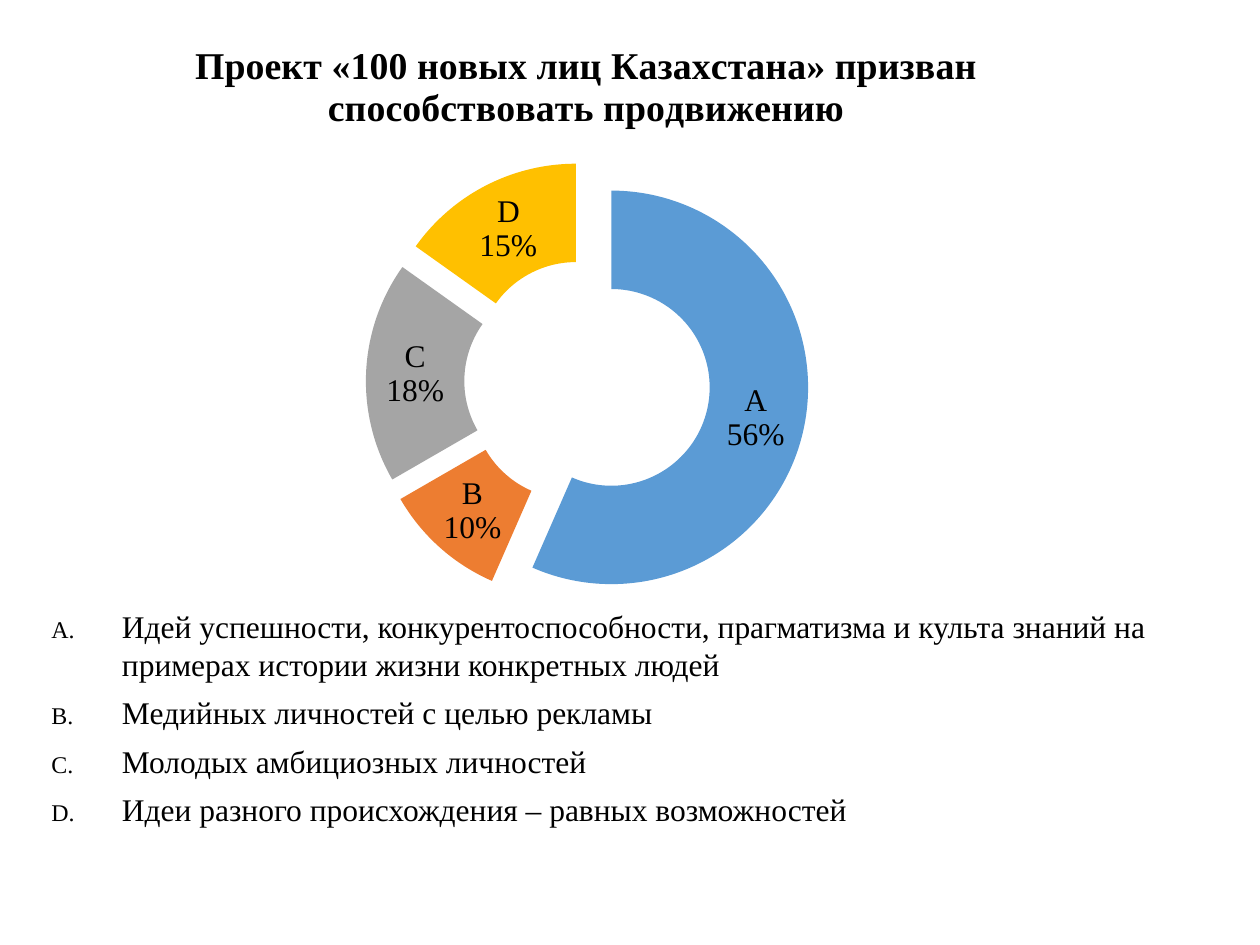
from lxml import etree
from pptx import Presentation
from pptx import util as u
from pptx.chart.data import CategoryChartData
from pptx.dml.color import RGBColor
from pptx.enum import chart as charts
from pptx.oxml.ns import qn

FONT = "Times New Roman"
BLACK = "000000"
QUESTION = "Проект «100 новых лиц Казахстана» призван способствовать продвижению"
SHARES = {"A": (56, "5B9BD5"), "B": (10, "ED7D31"), "C": (18, "A5A5A5"), "D": (15, "FFC000")}
ANSWERS = [
    "Идей успешности, конкурентоспособности, прагматизма и культа знаний на примерах истории жизни конкретных людей",
    "Медийных личностей с целью рекламы",
    "Молодых амбициозных личностей",
    "Идеи разного происхождения – равных возможностей",
]


def color(value):
    return RGBColor.from_string(value)


def style_font(font, size=18, bold=False, fill=BLACK, name=FONT):
    font.size, font.bold, font.name = u.Pt(size), bold, name
    font.color.rgb = color(fill)


def add_text(para, text, **style):
    span = para.add_run()
    span.text = text
    style_font(span.font, **style)


def add_letter_bullet(para, indent, percent):
    props = para._p.get_or_add_pPr()
    props.set("marL", str(indent))
    props.set("indent", str(-indent))
    etree.SubElement(props, qn("a:buSzPct"), val=str(percent * 1000))
    etree.SubElement(props, qn("a:buFont"), typeface=FONT)
    etree.SubElement(props, qn("a:buAutoNum"), type="alphaUcPeriod")


def add_answer_chart(page, left, top, width, height):
    data = CategoryChartData()
    data.categories = list(SHARES)
    data.add_series(QUESTION, [share for share, _ in SHARES.values()])
    chart = page.shapes.add_chart(
        charts.XL_CHART_TYPE.DOUGHNUT_EXPLODED, left, top, width, height, data).chart
    style_font(chart.font, name="Calibri")
    chart.has_legend = False
    chart.has_title = True
    add_text(chart.chart_title.text_frame.paragraphs[0], QUESTION, size=21.6, bold=True)
    chart.chart_title.include_in_layout = False

    plot = chart.plots[0]
    plot.vary_by_categories = True
    series = plot.series[0]
    for index, (_, fill) in enumerate(SHARES.values()):
        wedge = series.points[index].format.fill
        wedge.solid()
        wedge.fore_color.rgb = color(fill)
    for explosion in series._element.iter(qn("c:explosion")):
        explosion.set("val", "25")
    for hole in plot._element.iter(qn("c:holeSize")):
        hole.set("val", "50")

    # The shares are rounded and total 99, so they are labelled as values.
    labels = series.data_labels
    style_font(labels.font)
    labels.number_format = '0"%"'
    labels.number_format_is_linked = False
    labels.show_category_name = labels.show_value = True
    labels.show_percentage = labels.show_legend_key = False
    separator = etree.Element(qn("c:separator"))
    separator.text = "\n"
    labels._element.find(qn("c:showBubbleSize")).addnext(separator)


def add_answer_list(page, left, top, width, height):
    frame = page.shapes.add_textbox(left, top, width, height).text_frame
    frame.word_wrap = True
    for index, answer in enumerate(ANSWERS):
        para = frame.paragraphs[0] if index == 0 else frame.add_paragraph()
        para.space_before = u.Pt(6 if index else 0)
        add_letter_bullet(para, u.Inches(0.56), 76)
        add_text(para, answer)


def main():
    deck = Presentation()
    deck.slide_width, deck.slide_height = u.Inches(10), u.Inches(7.5)
    page = deck.slides.add_slide(deck.slide_layouts[6])
    add_answer_chart(page, u.Inches(0), u.Inches(0.12), u.Inches(9.31), u.Inches(4.81))
    add_answer_list(page, u.Inches(0.31), u.Inches(4.77), u.Inches(9.53), u.Inches(1.93))
    deck.save("out.pptx")


if __name__ == "__main__":
    main()
